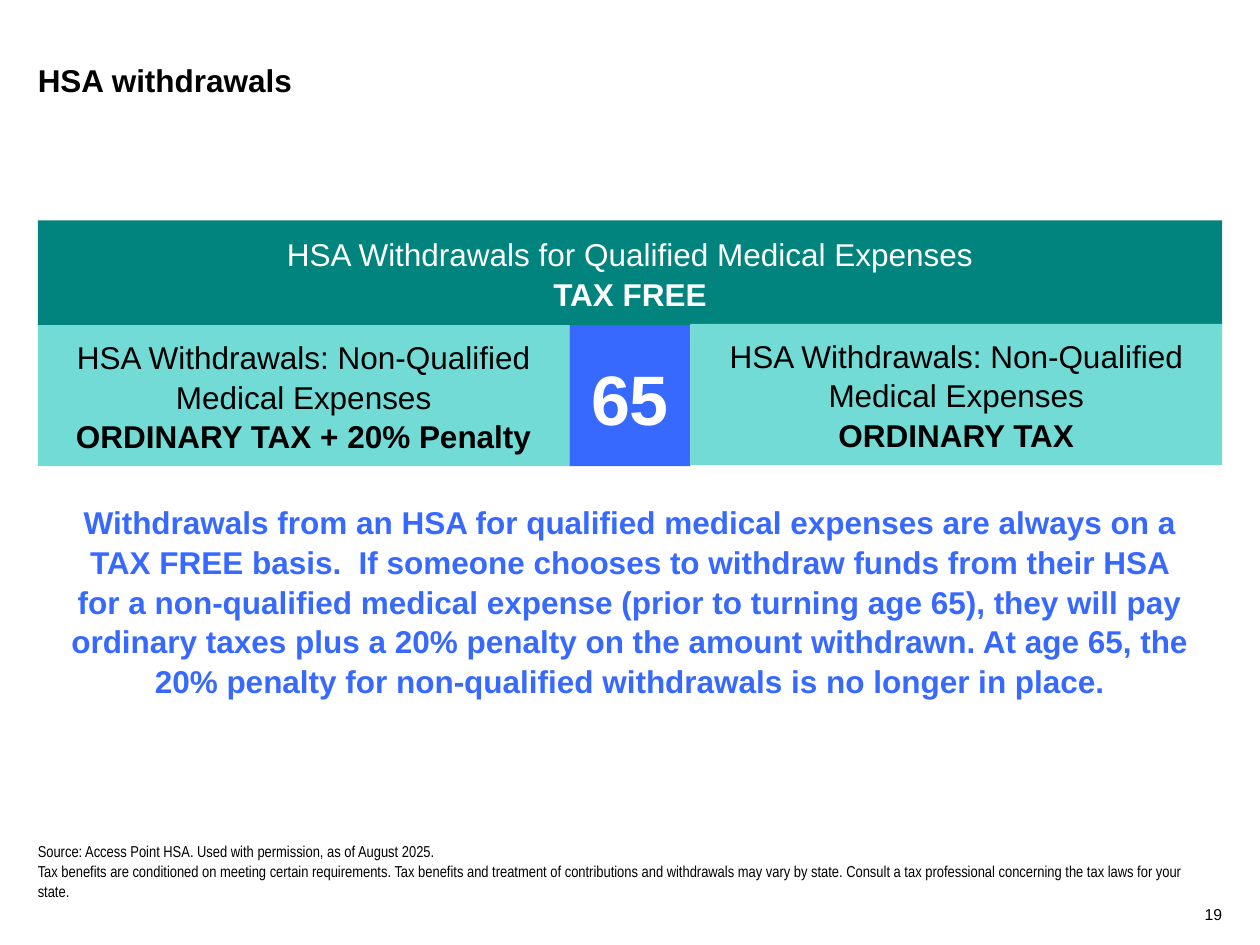
from dataclasses import dataclass

from pptx import Presentation
from pptx.dml.color import RGBColor
from pptx.enum.shapes import MSO_SHAPE
from pptx.enum.text import MSO_ANCHOR, PP_ALIGN
from pptx.util import Pt

RECTANGLE = MSO_SHAPE.RECTANGLE
TOP, MIDDLE, BOTTOM = MSO_ANCHOR.TOP, MSO_ANCHOR.MIDDLE, MSO_ANCHOR.BOTTOM
LEFT, CENTER, RIGHT = PP_ALIGN.LEFT, PP_ALIGN.CENTER, PP_ALIGN.RIGHT
EMU_PER_PX = 9144
LINE_SPACING = 1.05

BLACK, WHITE = "000000", "FFFFFF"
TEAL, AQUA, BLUE = "00847D", "72DBD5", "3769FF"

MARGIN = 30
CONTENT_WIDTH = 940
SIDE_WIDTH = 422
AGE_WIDTH = CONTENT_WIDTH - 2 * SIDE_WIDTH
AGE_LEFT = MARGIN + SIDE_WIDTH
LOWER_TOP = 258
LOWER_HEIGHT = 112


@dataclass(frozen=True)
class Area:
    left: int
    top: int
    width: int
    height: int

    def emu(self) -> list[int]:
        return [px * EMU_PER_PX for px in (self.left, self.top, self.width, self.height)]


@dataclass(frozen=True)
class Panel:
    area: Area
    fill: str
    color: str
    lead: str
    result: str
    size: int = 18


PANELS = [
    Panel(Area(MARGIN, 175, CONTENT_WIDTH, 83), TEAL, WHITE,
          "HSA Withdrawals for Qualified Medical Expenses", "TAX FREE"),
    Panel(Area(AGE_LEFT, LOWER_TOP, AGE_WIDTH, LOWER_HEIGHT), BLUE, WHITE, "", "65", 40),
    Panel(Area(MARGIN, LOWER_TOP, SIDE_WIDTH, LOWER_HEIGHT), AQUA, BLACK,
          "HSA Withdrawals: Non-Qualified Medical Expenses", "ORDINARY TAX + 20% Penalty"),
    Panel(Area(AGE_LEFT + AGE_WIDTH, LOWER_TOP - 1, SIDE_WIDTH, LOWER_HEIGHT), AQUA, BLACK,
          "HSA Withdrawals: Non-Qualified Medical Expenses", "ORDINARY TAX"),
]

EXPLANATION = (
    "Withdrawals from an HSA for qualified medical expenses are always on a TAX FREE basis.  "
    "If someone chooses to withdraw funds from their HSA for a non-qualified medical expense "
    "(prior to turning age 65), they will pay ordinary taxes plus a 20% penalty on the amount "
    "withdrawn. At age 65, the 20% penalty for non-qualified withdrawals is no longer in place."
)
FOOTNOTES = [
    "Source: Access Point HSA. Used with permission, as of August 2025.",
    "Tax benefits are conditioned on meeting certain requirements. Tax benefits and treatment of "
    "contributions and withdrawals may vary by state. Consult a tax professional concerning the "
    "tax laws for your state.",
]


def rgb(value: str) -> RGBColor:
    return RGBColor.from_string(value)


def add_span(para, text: str, *, size: int = 18, color: str = BLACK,
             bold: bool = False, font: str = "Arial") -> None:
    span = para.add_run()
    span.text = text
    span.font.size = Pt(size)
    span.font.name = font
    span.font.bold = bold
    span.font.color.rgb = rgb(color)


def set_frame(box, anchor, inset: tuple[int, int] = (0, 0)):
    frame = box.text_frame
    frame.word_wrap = True
    frame.vertical_anchor = anchor
    frame.margin_left = frame.margin_right = inset[0] * EMU_PER_PX
    frame.margin_top = frame.margin_bottom = inset[1] * EMU_PER_PX
    return frame


def set_para(para, align) -> None:
    para.alignment = align
    para.line_spacing = LINE_SPACING


def add_text(page, area: Area, lines: list[str], *, align=LEFT, anchor=TOP,
             inset: tuple[int, int] = (0, 0), **style) -> None:
    frame = set_frame(page.shapes.add_textbox(*area.emu()), anchor, inset)
    for index, line in enumerate(lines):
        para = frame.add_paragraph() if index else frame.paragraphs[0]
        set_para(para, align)
        add_span(para, line, **style)


def add_panel(page, panel: Panel) -> None:
    box = page.shapes.add_shape(RECTANGLE, *panel.area.emu())
    box.shadow.inherit = False
    box.fill.solid()
    box.fill.fore_color.rgb = rgb(panel.fill)
    box.line.fill.background()
    para = set_frame(box, MIDDLE).paragraphs[0]
    set_para(para, CENTER)
    if panel.lead:
        add_span(para, panel.lead, size=panel.size, color=panel.color)
        para.add_line_break()
    add_span(para, panel.result, size=panel.size, color=panel.color, bold=True)


def main() -> None:
    deck = Presentation()
    deck.slide_width = 1000 * EMU_PER_PX
    deck.slide_height = 750 * EMU_PER_PX
    page = deck.slides.add_slide(deck.slide_layouts[6])

    add_text(page, Area(MARGIN, 47, 700, 70), ["HSA withdrawals"], bold=True)
    for panel in PANELS:
        add_panel(page, panel)
    add_text(page, Area(45, 393, 910, 162), [EXPLANATION], align=CENTER,
             inset=(10, 5), color=BLUE, bold=True)
    add_text(page, Area(MARGIN, 670, 930, 45), FOOTNOTES, anchor=BOTTOM,
             size=9, font="Arial Narrow")
    add_text(page, Area(930, 715, 40, 18), ["19"], align=RIGHT, anchor=BOTTOM, size=9)

    deck.save("out.pptx")


if __name__ == "__main__":
    main()
